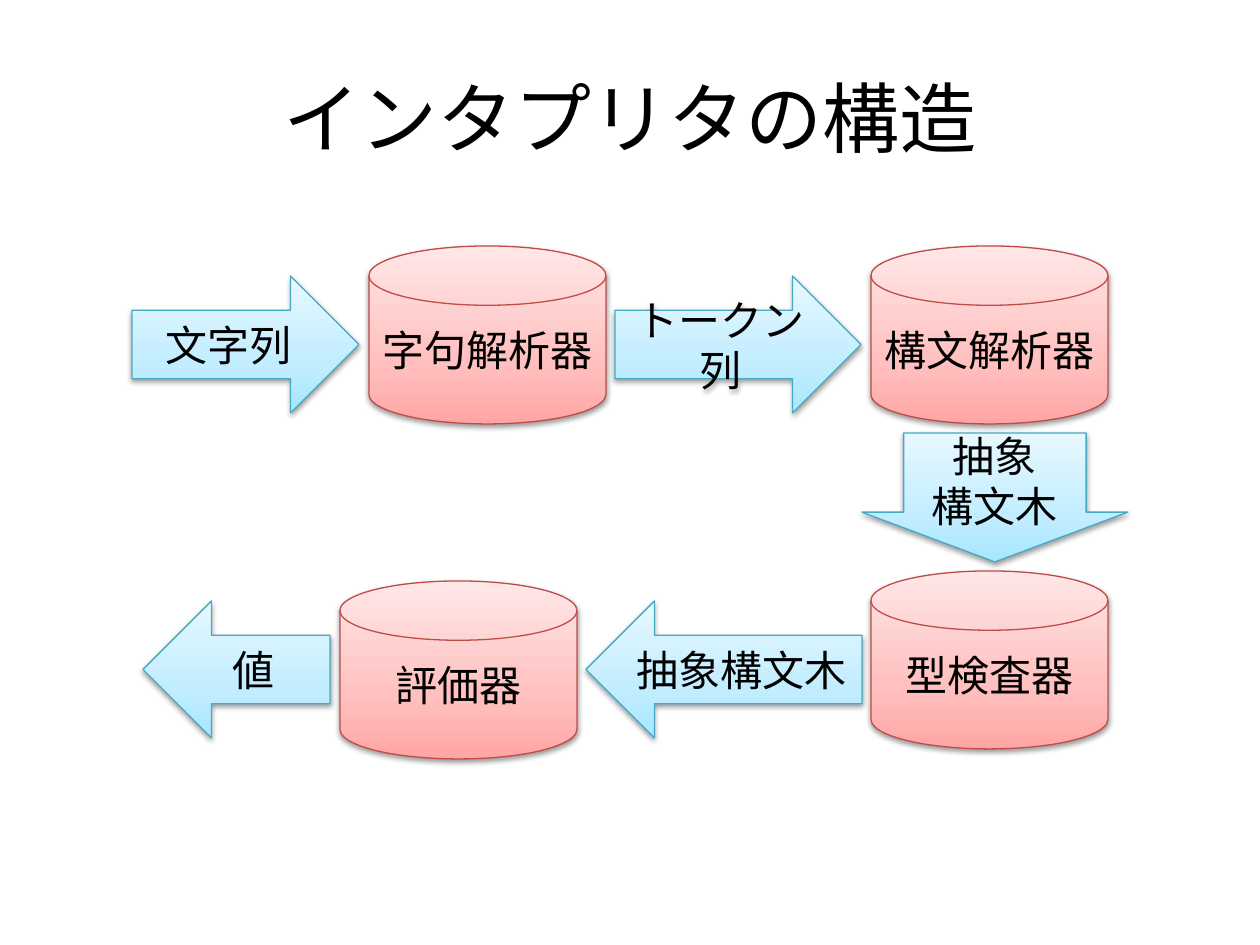
import pptx
import pptx.util
import pptx.dml.color
import pptx.enum.shapes
import pptx.enum.text
import pptx.oxml
import pptx.oxml.ns

# Content: stages as (label, left, top), flows as (label, direction, left, top, width), in px
TITLE = "インタプリタの構造"
STAGES = [
    ("字句解析器", 369, 246),
    ("構文解析器", 871, 246),
    ("型検査器", 871, 571),
    ("評価器", 340, 581),
]
TOP_ROW, BOTTOM_ROW = 276, 601
FLOWS = [
    ("文字列", "right", 132, TOP_ROW, 227),
    ("トークン列", "right", 615, TOP_ROW, 246),
    ("抽象\n構文木", "down", 862, 433, 266),
    ("抽象構文木", "left", 586, BOTTOM_ROW, 276),
    ("値", "left", 143, BOTTOM_ROW, 187),
]

# Look
PX = 914400 // 126
FONT = "Calibri"
COLORS = {"text": "000000", "stage_line": "BF4C48", "flow_line": "46AAC5"}
STAGE_STOPS = {0: "FFA6A5", 35: "FFC0BF", 100: "FFE7E7"}
FLOW_STOPS = {0: "A7E6FF", 35: "C1EDFF", 100: "E7F8FF"}
STAGE_SIZE = (237, 178)
FLOW_HEIGHT = {"right": 137, "left": 137, "down": 129}
KINDS = pptx.enum.shapes.MSO_SHAPE
ARROWS = {"right": KINDS.RIGHT_ARROW, "left": KINDS.LEFT_ARROW, "down": KINDS.DOWN_ARROW}
DOWN_ADJUSTMENTS = (0.686, 0.386)
NS = pptx.oxml.ns.nsdecls("a")


def rgb(name):
    return pptx.dml.color.RGBColor.from_string(COLORS[name])


def format_text(frame, size):
    frame.word_wrap = True
    frame.vertical_anchor = pptx.enum.text.MSO_ANCHOR.MIDDLE
    for paragraph in frame.paragraphs:
        paragraph.alignment = pptx.enum.text.PP_ALIGN.CENTER
        for run in paragraph.runs:
            run.font.size = pptx.util.Pt(size)
            run.font.name = FONT
            run.font.color.rgb = rgb("text")


def gradient(stops):
    marks = "".join(
        f'<a:gs pos="{position * 1000}"><a:srgbClr val="{color}"/></a:gs>'
        for position, color in stops.items()
    )
    return pptx.oxml.parse_xml(
        f'<a:gradFill {NS} rotWithShape="1"><a:gsLst>{marks}</a:gsLst>'
        '<a:lin ang="16200000" scaled="0"/></a:gradFill>'
    )


def soft_shadow():
    return pptx.oxml.parse_xml(
        f'<a:effectLst {NS}><a:outerShdw blurRad="40000" dist="20000" dir="5400000" '
        'rotWithShape="0"><a:srgbClr val="000000"><a:alpha val="38000"/></a:srgbClr>'
        "</a:outerShdw></a:effectLst>"
    )


def add_part(slide, kind, label, box, stops, line):
    part = slide.shapes.add_shape(kind, *(length * PX for length in box))
    part.line.color.rgb = rgb(line)
    part.line.width = pptx.util.Pt(0.75)
    properties = part._element.spPr
    properties.find(pptx.oxml.ns.qn("a:ln")).addprevious(gradient(stops))
    properties.append(soft_shadow())
    part.text_frame.paragraphs[0].text = label.replace("\n", "\v")
    format_text(part.text_frame, 24)
    return part


def main():
    deck = pptx.Presentation()
    deck.slide_width, deck.slide_height = 1260 * PX, 945 * PX
    slide = deck.slides.add_slide(deck.slide_layouts[5])

    # Title
    title = slide.shapes.title
    title.left, title.top, title.width, title.height = (n * PX for n in (63, 38, 1134, 158))
    title.text_frame.text = TITLE
    format_text(title.text_frame, 44)

    # Processing stages
    for label, left, top in STAGES:
        add_part(slide, KINDS.FLOWCHART_MAGNETIC_DISK, label,
                 (left, top, *STAGE_SIZE), STAGE_STOPS, "stage_line")

    # Data passed between the stages
    for label, direction, left, top, width in FLOWS:
        arrow = add_part(slide, ARROWS[direction], label,
                         (left, top, width, FLOW_HEIGHT[direction]), FLOW_STOPS, "flow_line")
        if direction == "down":
            for index, value in enumerate(DOWN_ADJUSTMENTS):
                arrow.adjustments[index] = value

    deck.save("out.pptx")


if __name__ == "__main__":
    main()
